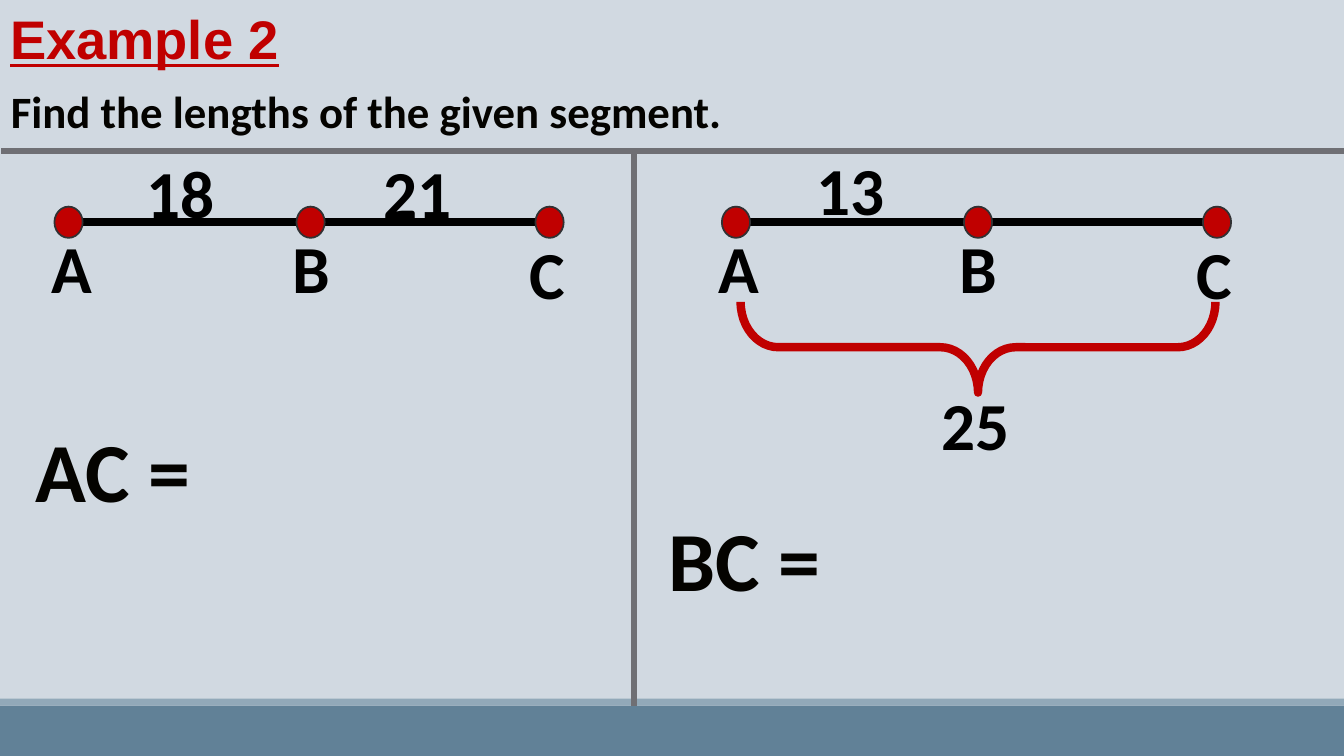
import dataclasses

import pptx
import pptx.dml.color
import pptx.enum.shapes
import pptx.enum.text
import pptx.oxml.ns
import pptx.util
from lxml import etree

WIDE, HIGH = 13.33, 7.5
COLORS = {
    "back": "D1D9E1", "bar": "618197", "edge": "92A9B9", "rule": "6F6F74",
    "red": "C00000", "ink": "040300", "black": "000000", "rim": "313133",
}
SHAPE = pptx.enum.shapes.MSO_SHAPE


# All lengths are percentages of the slide's width (x, w) and height (y, h).
@dataclasses.dataclass
class Box:
    x: float
    y: float
    w: float
    h: float


@dataclasses.dataclass
class Point:
    name: str
    dot: float
    box: Box


@dataclasses.dataclass
class Panel:
    shift: float
    sums: list[tuple[str, Box]]
    goal: str
    place: Box


def across(share: float) -> int:
    return pptx.util.Inches(WIDE * share / 100)


def down(share: float) -> int:
    return pptx.util.Inches(HIGH * share / 100)


def frame(box: Box) -> tuple[int, int, int, int]:
    return across(box.x), down(box.y), across(box.w), down(box.h)


def color(name: str) -> pptx.dml.color.RGBColor:
    return pptx.dml.color.RGBColor.from_string(COLORS[name])


def write(slide, text: str, box: Box, *, size: float = 48, font: str = "Calibri",
          ink: str = "black", under: bool = False, holder=None):
    """Put bold text in a placeholder, or in a new text box."""
    item = holder or slide.shapes.add_textbox(*frame(box))
    item.left, item.top, item.width, item.height = frame(box)
    body = item.text_frame
    body.word_wrap = True
    body.auto_size = pptx.enum.text.MSO_AUTO_SIZE.NONE
    body.vertical_anchor = pptx.enum.text.MSO_ANCHOR.TOP
    line = body.paragraphs[0]
    line.alignment = pptx.enum.text.PP_ALIGN.LEFT
    run = line.add_run()
    run.text = text
    run.font.size = pptx.util.Pt(size)
    run.font.name = font
    run.font.bold = True
    run.font.underline = under
    run.font.color.rgb = color(ink)


def draw(slide, kind, box: Box, *, fill: str = "", line: str = "", width: float = 1):
    item = slide.shapes.add_shape(kind, *frame(box))
    item.shadow.inherit = False
    if fill:
        item.fill.solid()
        item.fill.fore_color.rgb = color(fill)
    else:
        item.fill.background()
    if line:
        item.line.color.rgb = color(line)
        item.line.width = pptx.util.Pt(width)
    else:
        item.line.fill.background()
    return item


def join(slide, start: tuple[float, float], end: tuple[float, float],
         ink: str, width: float) -> None:
    item = slide.shapes.add_connector(
        pptx.enum.shapes.MSO_CONNECTOR.STRAIGHT,
        across(start[0]), down(start[1]), across(end[0]), down(end[1]))
    item.line.color.rgb = color(ink)
    item.line.width = pptx.util.Pt(width)
    etree.SubElement(item._element.spPr, pptx.oxml.ns.qn("a:effectLst"))


AXIS = 29.4
DOT_W, DOT_H = 2.1, 4.13
POINTS = [
    Point("A", 5.1, Box(3.08, 29.33, 4.13, 12.13)),
    Point("B", 23.11, Box(21.01, 29.33, 5.33, 12.13)),
    Point("C", 40.89, Box(38.63, 30.13, 5.33, 12.13)),
]
PANELS = [
    Panel(0, [("18", Box(10.13, 19.33, 6.9, 12.13)),
              ("21", Box(27.76, 19.33, 7.5, 12.13))],
          "AC =", Box(1.88, 54.67, 13.58, 14.8)),
    Panel(49.66, [("13", Box(60.02, 18.93, 6.9, 12.13)),
                  ("25", Box(69.32, 50, 6.9, 12.13))],
          "BC =", Box(48.99, 66.53, 13.58, 14.8)),
]


def segment(slide, panel: Panel) -> None:
    """Draw one segment with its points, lengths and question."""
    join(slide, (panel.shift + 6, AXIS), (panel.shift + 41.33, AXIS), "black", 6)
    for point in POINTS:
        box = dataclasses.replace(point.box, x=panel.shift + point.box.x)
        write(slide, point.name, box)
        dot = Box(panel.shift + point.dot - DOT_W / 2, AXIS - DOT_H / 2, DOT_W, DOT_H)
        draw(slide, SHAPE.OVAL, dot, fill="red", line="rim", width=1.25)
    for text, box in panel.sums:
        write(slide, text, box)
    write(slide, panel.goal, panel.place, size=60, ink="ink")


def main() -> None:
    deck = pptx.Presentation()
    deck.slide_width, deck.slide_height = across(100), down(100)
    slide = deck.slides.add_slide(deck.slide_layouts[5])
    slide.background.fill.solid()
    slide.background.fill.fore_color.rgb = color("back")

    # Footer bars
    draw(slide, SHAPE.RECTANGLE, Box(0, 93.33, 100, 6.67), fill="bar")
    draw(slide, SHAPE.RECTANGLE, Box(0, 92.4, 100, 0.93), fill="edge")

    # Heading and task
    write(slide, "Example 2", Box(0, 0, 73.5, 10), size=38.8, font="Arial",
          ink="red", under=True, holder=slide.shapes.title)
    write(slide, "Find the lengths of the given segment.",
          Box(0.08, 10.4, 55.3, 8.53), size=32, ink="ink")

    # Dividing rules
    join(slide, (0.08, 20), (100, 20), "rule", 4.5)
    join(slide, (47.19, 93.33), (47.19, 20), "rule", 4.5)

    # Segments
    for panel in PANELS:
        segment(slide, panel)

    # Brace over the whole right segment
    brace = draw(slide, SHAPE.RIGHT_BRACE, Box(69.39, 14.53, 6.75, 62.8),
                 line="red", width=6)
    brace.rotation = 90
    brace.adjustments[0] = 0.415
    brace.adjustments[1] = 0.5

    deck.save("out.pptx")


if __name__ == "__main__":
    main()
